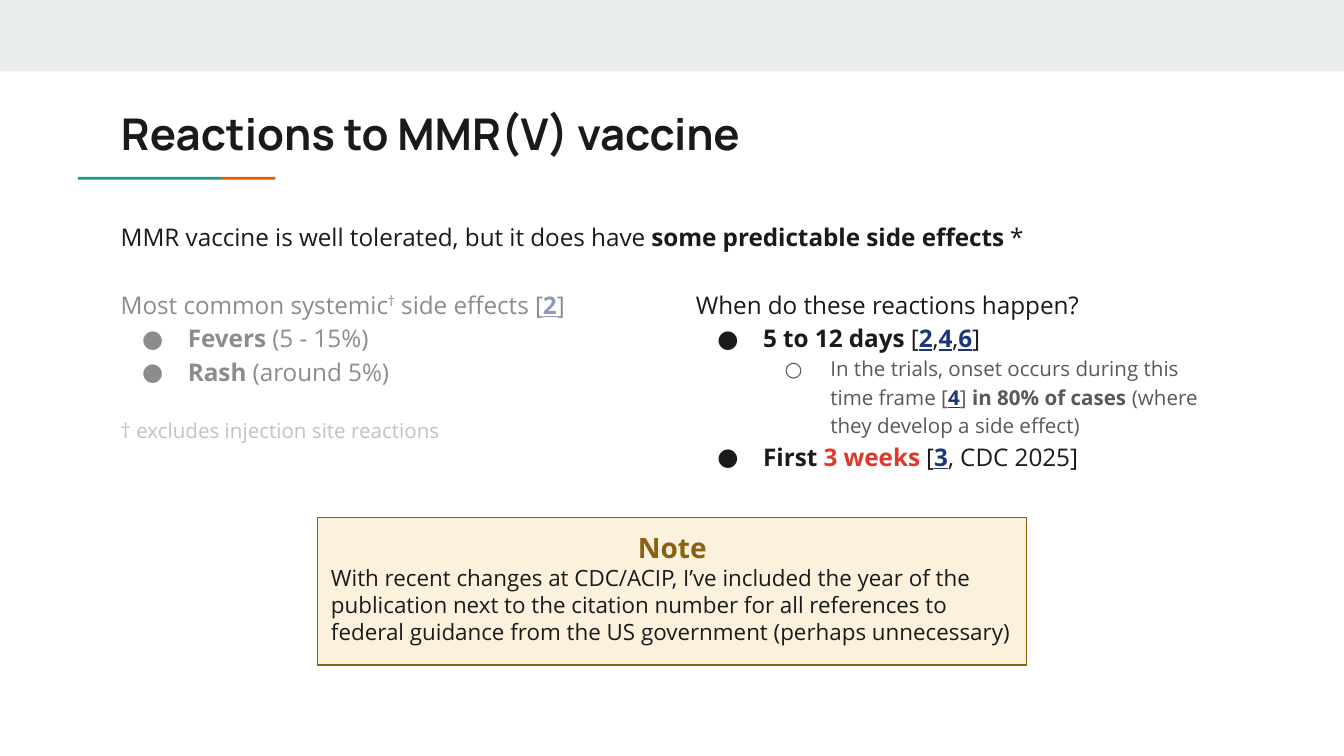
"""Build the slide on reactions to the MMR(V) vaccine."""
from lxml import etree
from pptx import Presentation
from pptx import util as u
from pptx.dml.color import RGBColor
from pptx.enum import shapes, text
from pptx.oxml.ns import qn

INK, GREY, PALE, LINK, RED, BROWN = "1A1A1A", "595959", "858585", "1C3678", "DF382C", "896110"
rgb = RGBColor.from_string

deck = Presentation()
deck.slide_width = u.Inches(10)
deck.slide_height = deck.slide_width * 9 // 16
CELL = deck.slide_width / 100
page = deck.slides.add_slide(deck.slide_layouts[5])


def panel(fill, *cells):
    """Add a borderless rectangle placed on the grid."""
    shape = page.shapes.add_shape(shapes.MSO_SHAPE.RECTANGLE, *[round(n * CELL) for n in cells])
    shape.shadow.inherit = False
    shape.fill.solid()
    shape.fill.fore_color.rgb = rgb(fill)
    shape.line.fill.background()
    return shape


def write(box, rows, spacing=1.15, font="Open Sans"):
    """Fill a box with rows of (size, colour, bullet, spans); a span is (text, style)."""
    frame = box.text_frame
    frame.word_wrap = True
    frame.auto_size = text.MSO_AUTO_SIZE.NONE
    frame.vertical_anchor = text.MSO_ANCHOR.TOP
    frame.margin_left = frame.margin_right = frame.margin_top = frame.margin_bottom = u.Inches(0.1)
    for index, (size, colour, bullet, spans) in enumerate(rows):
        para = frame.add_paragraph() if index else frame.paragraphs[0]
        para.alignment = text.PP_ALIGN.LEFT
        para.line_spacing = spacing
        para.font.name, para.font.size = font, u.Pt(size)
        if bullet:
            para.level = 1 if bullet == "○" else 0
            props = para._p.get_or_add_pPr()
            props.set("marL", str(u.Inches(0.5 + 0.5 * para.level)))
            props.set("indent", str(u.Inches(-0.34)))
            tone = etree.Element(qn("a:buClr"))
            etree.SubElement(tone, qn("a:srgbClr"), val=colour)
            for mark in (tone,
                         etree.Element(qn("a:buSzPts"), val=str(size * 100)),
                         etree.Element(qn("a:buFont"), typeface=font),
                         etree.Element(qn("a:buChar"), char=bullet)):
                props.insert_element_before(mark, "a:tabLst", "a:defRPr", "a:extLst")
        for words, style in spans:
            span = para.add_run()
            span.text = words
            span.font.bold = style in ("bold", "link", "red")
            span.font.color.rgb = rgb({"link": LINK, "red": RED}.get(style, colour))
            if style == "link":
                span.font.underline = True
            if style == "super":
                span._r.get_or_add_rPr().set("baseline", "30000")
    return frame.paragraphs


panel("E9EDEE", 0, 0, 100, 5.32)
panel("1A9988", 5.8, 13.17, 10.65, 0.2)
panel("EB5600", 16.45, 13.17, 4.05, 0.2)

title = page.shapes.title
title.left, title.top, title.width, title.height = [round(n * CELL) for n in (8, 6.94, 84.1, 5.9)]
write(title, [(23.4, INK, "", [("Reactions to MMR(V) vaccine", "bold")])], 1, "Manrope")

common = [
    (13, INK, "", [("Most common systemic", ""), ("†", "super"), (" side effects [", ""),
                   ("2", "link"), ("]", "")]),
    (13, INK, "●", [("Fevers", "bold"), (" (5 - 15%)", "")]),
    (13, INK, "●", [("Rash", "bold"), (" (around 5%)", "")]),
    (11, PALE, "", [("† excludes injection site reactions", "")]),
]
timing = [
    (13, INK, "", [("When do these reactions happen?", "")]),
    (13, INK, "●", [("5 to 12 days ", "bold"), ("[", ""), ("2", "link"), (",", ""),
                    ("4", "link"), (",", ""), ("6", "link"), ("]", "")]),
    (11, GREY, "○", [("In the trials, onset occurs during this time frame [", ""), ("4", "link"),
                     ("] ", ""), ("in 80% of cases ", "bold"),
                     ("(where they develop a side effect)", "")]),
    (13, INK, "●", [("First ", "bold"), ("3 weeks", "red"), (" [", ""), ("3", "link"),
                    (", CDC 2025]", "")]),
]
intro = [(13, INK, "", [("MMR vaccine is well tolerated, but it does have ", ""),
                        ("some predictable side effects", "bold"), (" *", "")])]
for rows, cells in ((common, (8, 20.25, 41.3, 14.4)),
                    (timing, (50.8, 20.25, 41.3, 24.7)),
                    (intro, (8, 15.2, 84.1, 4.3))):
    paras = write(page.shapes.add_textbox(*[round(n * CELL) for n in cells]), rows)
    if rows is common:
        paras[-1].space_before = u.Pt(15.2)

note = panel("FBF1DD", 23.64, 38.5, 52.75, 11)
note.line.color.rgb = rgb(BROWN)
note.line.width = u.Pt(0.75)
heading, _ = write(note, [
    (15, BROWN, "", [("Note", "bold")]),
    (12, INK, "", [("With recent changes at CDC/ACIP, I’ve included the year of the publication "
                    "next to the citation number for all references to federal guidance from "
                    "the US government (perhaps unnecessary)", "")]),
], 1)
heading.alignment = text.PP_ALIGN.CENTER

veil = panel("FFFFFF", 8, 19.5, 39.1, 15.2)
tint = veil._element.spPr.find(qn("a:solidFill"))[0]
etree.SubElement(tint, qn("a:alpha"), val="50000")

deck.save("out.pptx")
